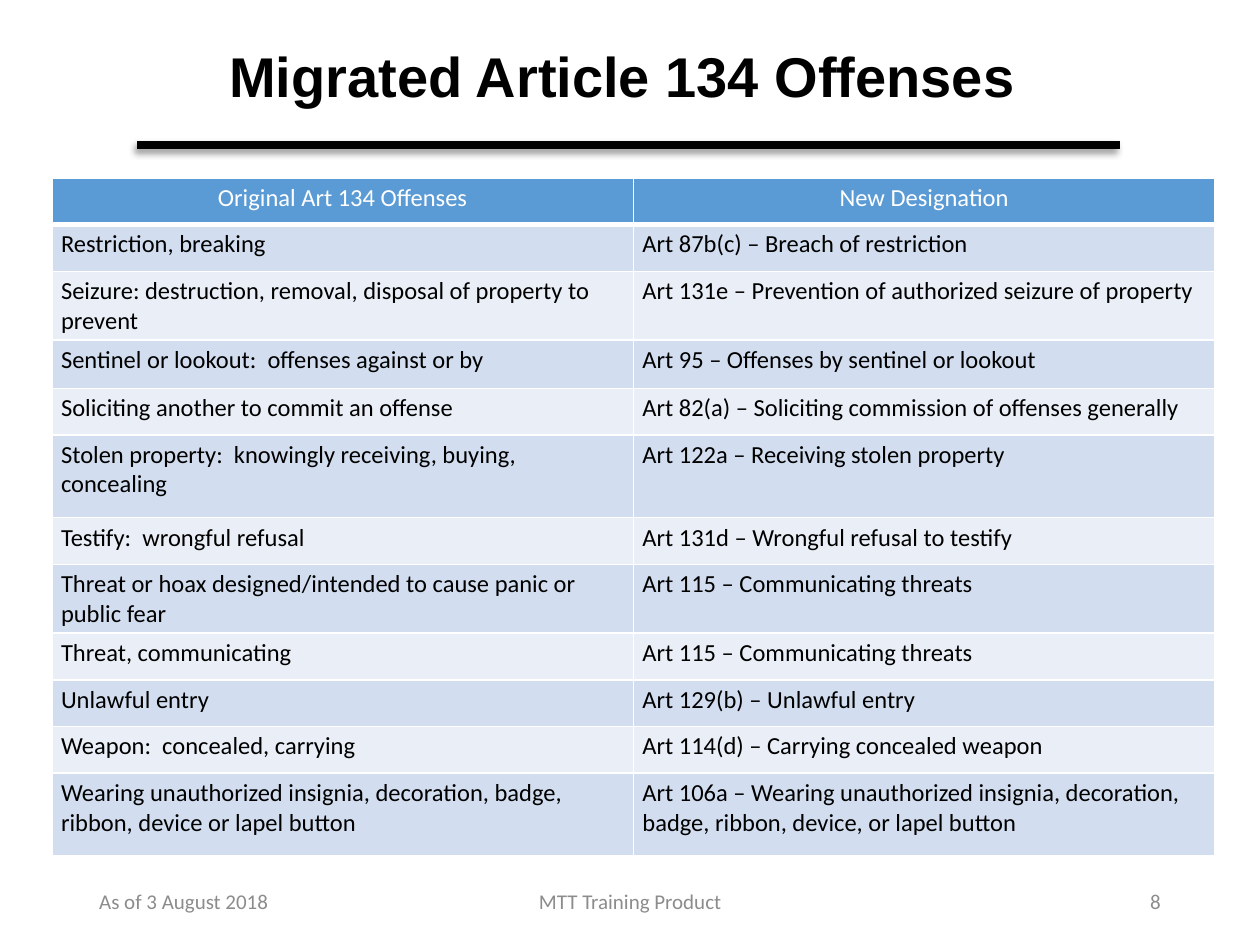
"""Build the slide of migrated Article 134 offenses."""
from typing import Any, NamedTuple

from lxml import etree
from pptx import Presentation
from pptx import util as u
from pptx.dml.color import RGBColor
from pptx.enum import shapes, text
from pptx.oxml import parse_xml
from pptx.oxml.ns import nsdecls, qn

BLACK = RGBColor(0x00, 0x00, 0x00)
WHITE = RGBColor(0xFF, 0xFF, 0xFF)
GRAY = RGBColor(0x8C, 0x8C, 0x8C)
BLUE = RGBColor(0x5B, 0x9B, 0xD5)
BAND_DARK = RGBColor(0xD2, 0xDE, 0xEF)
BAND_LIGHT = RGBColor(0xEA, 0xEF, 0xF7)

LEFT, CENTER, RIGHT = text.PP_ALIGN.LEFT, text.PP_ALIGN.CENTER, text.PP_ALIGN.RIGHT
TITLE_FONT = {"name": "Arial", "size": u.Pt(32), "bold": True}
FOOTER_FONT = {"name": "Calibri", "size": u.Pt(12)}
CELL_FONT = {"name": "Calibri", "size": u.Pt(14), "bold": False}
CELL_MARGINS = {
    "margin_left": u.Cm(0.18),
    "margin_right": u.Cm(0.18),
    "margin_top": u.Cm(0.1),
    "margin_bottom": u.Cm(0.1),
}
ROW_HEIGHT, TALL_HEIGHT, COLUMN_WIDTH = 0.94, 1.67, 11.72


class Label(NamedTuple):
    words: str
    left: float
    top: float
    width: float
    height: float
    align: Any
    font: dict
    color: RGBColor
    spacing: float = 1.0


class Offense(NamedTuple):
    original: str
    new: str
    height: float = ROW_HEIGHT


LABELS = [
    Label("Migrated Article 134 Offenses", 2.64, 0.58, 19.81, 2.06, CENTER, TITLE_FONT, BLACK, 0.9),
    Label("As of 3 August 2018", 1.75, 17.65, 5.72, 1.02, LEFT, FOOTER_FONT, GRAY),
    Label("MTT Training Product", 8.41, 17.65, 8.59, 1.02, CENTER, FOOTER_FONT, GRAY),
    Label("8", 17.93, 17.65, 5.72, 1.02, RIGHT, FOOTER_FONT, GRAY),
]

OFFENSES = [
    Offense("Original Art 134 Offenses", "New Designation"),
    Offense("Restriction, breaking", "Art 87b(c) – Breach of restriction"),
    Offense("Seizure: destruction, removal, disposal of property to prevent",
            "Art 131e – Prevention of authorized seizure of property"),
    Offense("Sentinel or lookout:  offenses against or by",
            "Art 95 – Offenses by sentinel or lookout", 0.97),
    Offense("Soliciting another to commit an offense",
            "Art 82(a) – Soliciting commission of offenses generally"),
    Offense("Stolen property:  knowingly receiving, buying, concealing",
            "Art 122a – Receiving stolen property", TALL_HEIGHT),
    Offense("Testify:  wrongful refusal", "Art 131d – Wrongful refusal to testify"),
    Offense("Threat or hoax designed/intended to cause panic or public fear",
            "Art 115 – Communicating threats"),
    Offense("Threat, communicating", "Art 115 – Communicating threats"),
    Offense("Unlawful entry", "Art 129(b) – Unlawful entry"),
    Offense("Weapon:  concealed, carrying", "Art 114(d) – Carrying concealed weapon"),
    Offense("Wearing unauthorized insignia, decoration, badge, ribbon, device or lapel button",
            "Art 106a – Wearing unauthorized insignia, decoration, badge, ribbon, device, "
            "or lapel button", TALL_HEIGHT),
]


def apply(target: Any, values: dict) -> None:
    """Set each named attribute on the target."""
    for name, value in values.items():
        setattr(target, name, value)


def write(p: Any, words: str, align: Any, font: dict, color: RGBColor) -> None:
    """Fill a paragraph with one formatted run."""
    p.alignment = align
    r = p.add_run()
    r.text = words
    apply(r.font, font)
    r.font.color.rgb = color


def add_label(s: Any, label: Label) -> None:
    """Add a vertically centred text box."""
    box = (u.Cm(v) for v in (label.left, label.top, label.width, label.height))
    tf = s.shapes.add_textbox(*box).text_frame
    apply(tf, {"word_wrap": True, "vertical_anchor": text.MSO_ANCHOR.MIDDLE})
    p = tf.paragraphs[0]
    p.line_spacing = label.spacing
    write(p, label.words, label.align, label.font, label.color)


def add_rule(s: Any) -> None:
    """Add the shadowed rule under the title."""
    y = u.Cm(2.92)
    sp = s.shapes.add_connector(shapes.MSO_CONNECTOR.STRAIGHT, u.Cm(2.77), y, u.Cm(22.58), y)
    sp.line.color.rgb = BLACK
    sp.line.width = u.Pt(4.25)
    sp._element.spPr.append(parse_xml(
        f'<a:effectLst {nsdecls("a")}>'
        f'<a:outerShdw blurRad="{u.Pt(4)}" dist="{u.Pt(3)}" dir="8100000" rotWithShape="0">'
        f'<a:srgbClr val="{BLACK}"><a:alpha val="40000"/></a:srgbClr>'
        '</a:outerShdw></a:effectLst>'))


def add_borders(cell: Any, bottom: float) -> None:
    """Give a cell white borders with the chosen bottom weight."""
    tc_pr = cell._tc.get_or_add_tcPr()
    for side, weight in {"L": 1, "R": 1, "T": 1, "B": bottom}.items():
        ln = etree.SubElement(tc_pr, qn(f"a:ln{side}"), w=str(u.Pt(weight)))
        fill = etree.SubElement(ln, qn("a:solidFill"))
        etree.SubElement(fill, qn("a:srgbClr"), val=str(WHITE))


def add_offense_table(s: Any, offenses: list[Offense]) -> None:
    """Add the banded table of original and new designations."""
    table = s.shapes.add_table(
        len(offenses), 2, u.Cm(1.05), u.Cm(3.59), u.Cm(2 * COLUMN_WIDTH),
        u.Cm(sum(o.height for o in offenses))).table
    apply(table, {"first_row": False, "horz_banding": False})
    for column in table.columns:
        column.width = u.Cm(COLUMN_WIDTH)
    for i, offense in enumerate(offenses):
        header = i == 0
        table.rows[i].height = u.Cm(offense.height)
        for j, words in enumerate((offense.original, offense.new)):
            cell = table.cell(i, j)
            apply(cell, CELL_MARGINS)
            add_borders(cell, 3 if header else 1)
            cell.fill.solid()
            cell.fill.fore_color.rgb = BLUE if header else BAND_DARK if i % 2 else BAND_LIGHT
            write(cell.text_frame.paragraphs[0], words, CENTER if header else LEFT,
                  CELL_FONT, WHITE if header else BLACK)


def main() -> None:
    """Assemble and save the slide."""
    prs = Presentation()
    apply(prs, {"slide_width": u.Cm(25.4), "slide_height": u.Cm(19.05)})
    s = prs.slides.add_slide(prs.slide_layouts[6])
    add_rule(s)
    for label in LABELS:
        add_label(s, label)
    add_offense_table(s, OFFENSES)
    prs.save("out.pptx")


if __name__ == "__main__":
    main()
